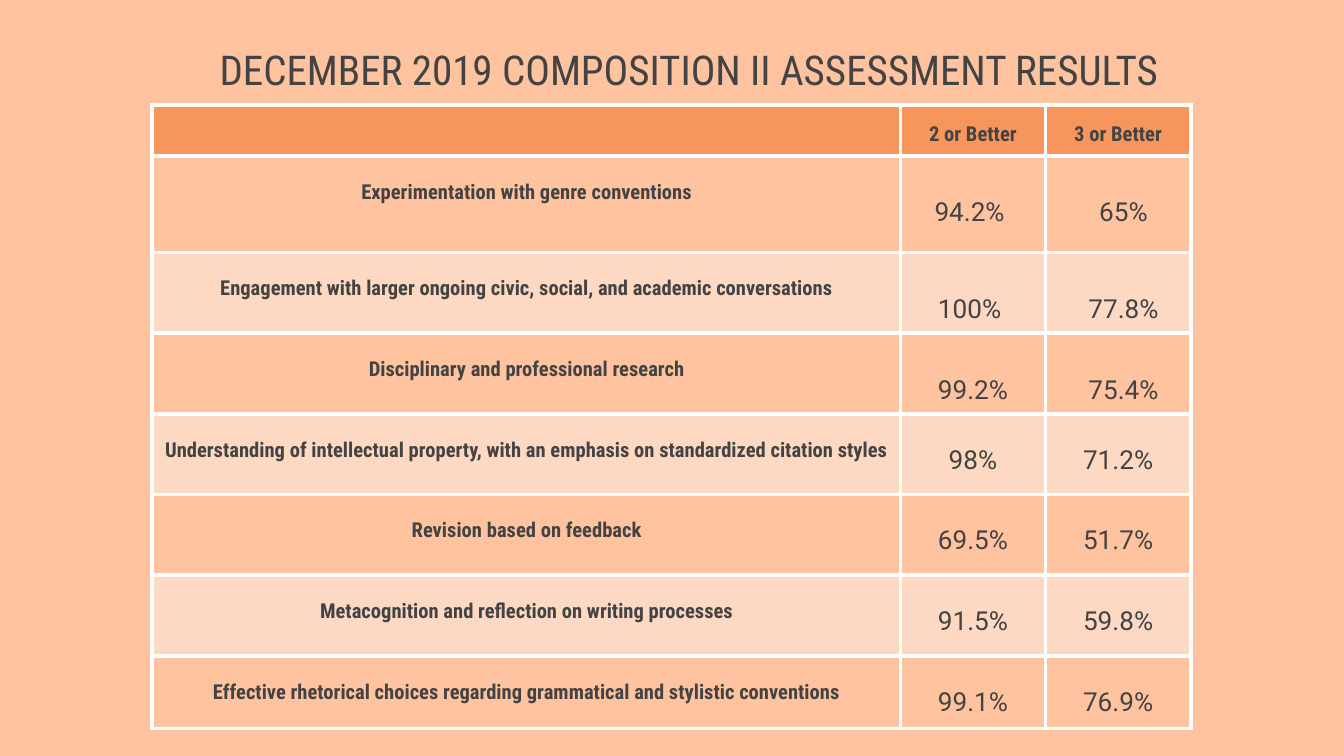
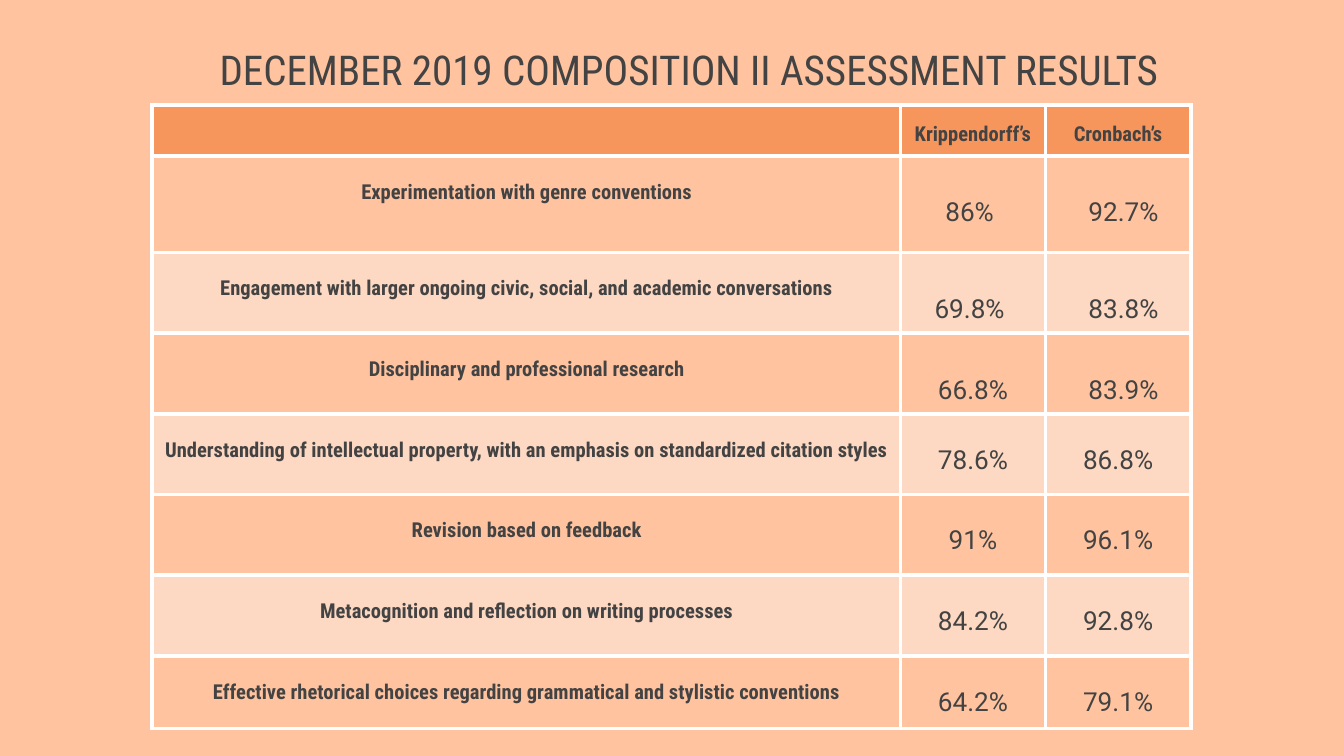
from lxml.etree import SubElement
from pptx import Presentation
from pptx.dml.color import RGBColor
from pptx.enum.text import MSO_ANCHOR, PP_ALIGN
from pptx.oxml.ns import qn
from pptx.util import Inches, Pt

TITLE = "DECEMBER 2019 COMPOSITION II ASSESSMENT RESULTS"
CRITERIA = [
    "Experimentation with genre conventions",
    "Engagement with larger ongoing civic, social, and academic conversations",
    "Disciplinary and professional research",
    "Understanding of intellectual property, with an emphasis on standardized citation styles",
    "Revision based on feedback",
    "Metacognition and reflection on writing processes",
    "Effective rhetorical choices regarding grammatical and stylistic conventions",
]
RESULTS = [
    {
        "2 or Better": ["94.2%", "100%", "99.2%", "98%", "69.5%", "91.5%", "99.1%"],
        "3 or Better": ["65%", "77.8%", "75.4%", "71.2%", "51.7%", "59.8%", "76.9%"],
    },
    {
        "Krippendorff’s": ["86%", "69.8%", "66.8%", "78.6%", "91%", "84.2%", "64.2%"],
        "Cronbach’s": ["92.7%", "83.8%", "83.9%", "86.8%", "96.1%", "92.8%", "79.1%"],
    },
]

BACKGROUND, HEADER, BAND = "FFC39F", "F7965C", "FDD8C2"
INK, RULE = "434343", "FFFFFF"
CONDENSED, REGULAR = "Roboto Condensed", "Roboto"
COLUMN_WIDTHS = [5.57, 1.08, 1.08]
ROW_HEIGHTS = [0.38, 0.72] + [0.6] * 5 + [0.54]
TABLE_LEFT, TABLE_TOP = 1.13, 0.78


def color(hex_value):
    return RGBColor.from_string(hex_value)


def write(frame, text, size=11, font=CONDENSED, bold=False):
    paragraph = frame.paragraphs[0]
    paragraph.alignment = PP_ALIGN.CENTER
    run = paragraph.add_run()
    run.text = text
    run.font.size = Pt(size)
    run.font.name = font
    run.font.bold = bold
    run.font.color.rgb = color(INK)


def set_margins(box, left=0, top=0, right=0, bottom=0):
    box.margin_left, box.margin_top = Inches(left), Inches(top)
    box.margin_right, box.margin_bottom = Inches(right), Inches(bottom)


def add_borders(cell):
    properties = cell._tc.get_or_add_tcPr()
    for position, side in enumerate(("lnL", "lnR", "lnT", "lnB")):
        line = properties.makeelement(qn(f"a:{side}"), {"w": str(Pt(2.25))})
        fill = SubElement(line, qn("a:solidFill"))
        SubElement(fill, qn("a:srgbClr"), val=RULE)
        properties.insert(position, line)


def fill_cell(cell, row):
    if row % 2 == 0:
        cell.fill.solid()
        cell.fill.fore_color.rgb = color(BAND if row else HEADER)
    else:
        cell.fill.background()


def value_margins(row, column):
    """The first three criteria sit lower, and their values are nudged sideways."""
    if row > 3:
        return {"top": 0.23}
    if column == 2:
        return {"top": 0.31, "left": 0.08}
    return {"top": 0.31, "right": 0.05 if row < 3 else 0}


def add_title(slide):
    title = slide.shapes.add_textbox(Inches(0.45), Inches(0.26), Inches(9.35), Inches(0.44))
    frame = title.text_frame
    frame.word_wrap = True
    frame.vertical_anchor = MSO_ANCHOR.BOTTOM
    set_margins(frame)
    write(frame, TITLE, size=22)


def add_results(slide, measures):
    rows = [["", *measures], *zip(CRITERIA, *measures.values())]
    table = slide.shapes.add_table(
        len(rows), len(COLUMN_WIDTHS), Inches(TABLE_LEFT), Inches(TABLE_TOP),
        Inches(sum(COLUMN_WIDTHS)), Inches(sum(ROW_HEIGHTS))).table
    table.first_row = table.horz_banding = False
    for column, width in zip(table.columns, COLUMN_WIDTHS):
        column.width = Inches(width)
    for table_row, height in zip(table.rows, ROW_HEIGHTS):
        table_row.height = Inches(height)

    for row, entries in enumerate(rows):
        for column, entry in enumerate(entries):
            cell = table.cell(row, column)
            fill_cell(cell, row)
            add_borders(cell)
            if not entry:
                set_margins(cell)
            elif row == 0 or column == 0:
                set_margins(cell, top=0.18 if row else 0.13, left=0.01 if row else 0)
                write(cell.text_frame, entry, bold=True)
            else:
                set_margins(cell, **value_margins(row, column))
                write(cell.text_frame, entry, size=14, font=REGULAR)


def main():
    deck = Presentation()
    deck.slide_width = Inches(10)
    deck.slide_height = deck.slide_width * 9 // 16
    for measures in RESULTS:
        slide = deck.slides.add_slide(deck.slide_layouts[6])
        slide.background.fill.solid()
        slide.background.fill.fore_color.rgb = color(BACKGROUND)
        add_results(slide, measures)
        add_title(slide)
    deck.save("out.pptx")


if __name__ == "__main__":
    main()
